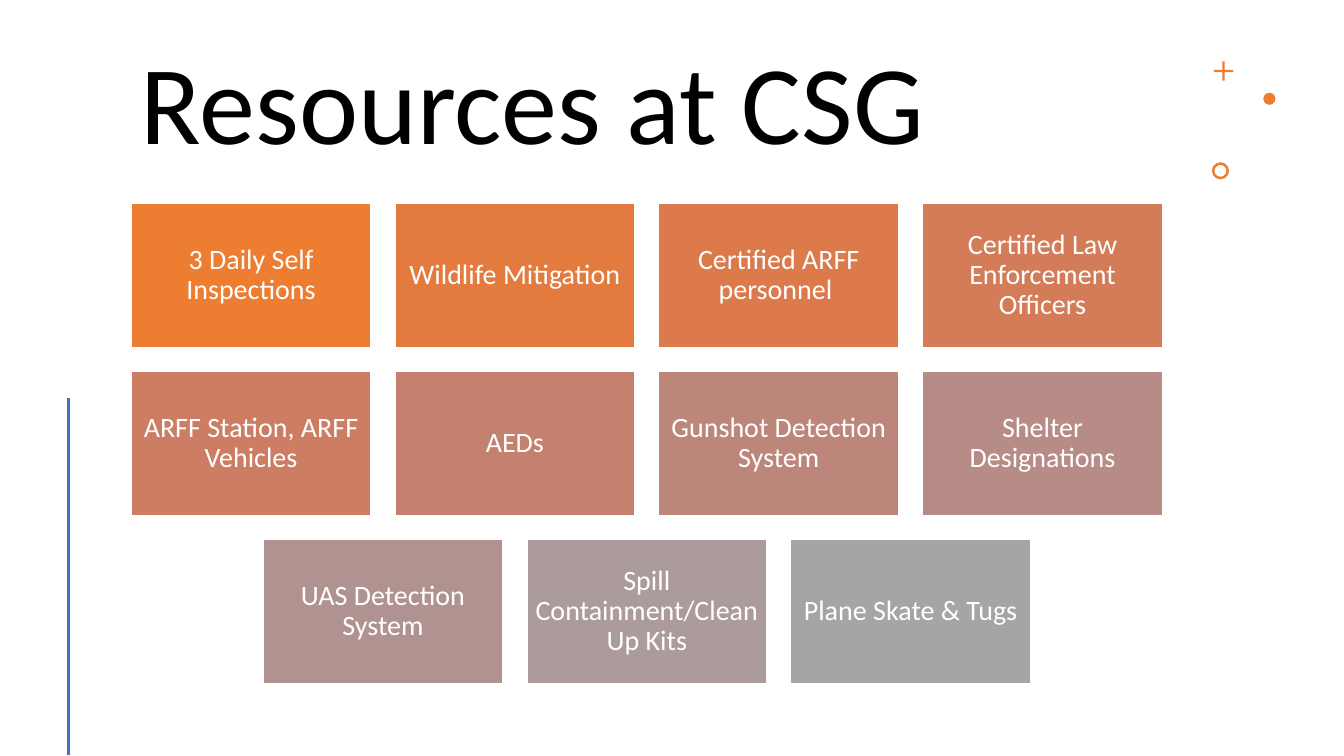
"""Build the slide listing the resources at CSG as a grid of tiles."""
from dataclasses import dataclass

from lxml.etree import SubElement
from pptx import Presentation
from pptx.dml.color import RGBColor
from pptx.enum.shapes import MSO_CONNECTOR as Connector, MSO_SHAPE as Preset
from pptx.enum.text import MSO_ANCHOR as Anchor, PP_ALIGN as Align
from pptx.oxml.ns import qn
from pptx.util import Inches, Pt

TITLE = "Resources at CSG"
ROWS = [
    [("3 Daily Self Inspections", "ED7D31"),
     ("Wildlife Mitigation", "E47B3E"),
     ("Certified ARFF personnel ", "DC7A4B"),
     ("Certified Law Enforcement Officers", "D47B58")],
    [("ARFF Station, ARFF Vehicles", "CC7D64"),
     ("AEDs", "C48170"),
     ("Gunshot Detection System", "BD867B"),
     ("Shelter Designations", "B78C86")],
    [("UAS Detection System", "B09391"),
     ("Spill Containment/Clean Up Kits", "AB9C9B"),
     ("Plane Skate & Tugs", "A5A5A5")],
]
ORNAMENTS = [
    (Preset.CROSS, 12.04, 0.61, 0.19, 0.44),
    (Preset.OVAL, 12.53, 0.92, 0.12, None),
    (Preset.DONUT, 12.02, 1.61, 0.17, 0.15),
]


@dataclass(frozen=True)
class Theme:
    font: str = "Calibri"
    title_size: int = 80
    tile_size: int = 20
    ink: str = "000000"
    paper: str = "FFFFFF"
    accent: str = "ED7D31"
    rule: str = "4472C4"


THEME = Theme()
GRID_LEFT, GRID_TOP, GRID_WIDTH = 1.3, 2.02, 10.23
TILE_WIDTH, TILE_HEIGHT, TILE_INSET = 2.38, 1.43, 0.08
COLUMNS = max(len(row) for row in ROWS)
GAP = (GRID_WIDTH - COLUMNS * TILE_WIDTH) / (COLUMNS - 1)


def colour(code):
    return RGBColor.from_string(code)


def write(shape, text, size, ink, align):
    frame = shape.text_frame
    frame.word_wrap = True
    frame.vertical_anchor = Anchor.MIDDLE
    para = frame.paragraphs[0]
    para.alignment = align
    para.line_spacing = 0.9
    span = para.add_run()
    span.text = text
    span.font.name = THEME.font
    span.font.size = Pt(size)
    span.font.color.rgb = colour(ink)
    return frame


def add_filled(page, preset, left, top, width, height, fill):
    shape = page.shapes.add_shape(
        preset, Inches(left), Inches(top), Inches(width), Inches(height))
    shape.shadow.inherit = False
    shape.fill.solid()
    shape.fill.fore_color.rgb = colour(fill)
    shape.line.fill.background()
    return shape


def add_title(page):
    box = page.shapes.add_textbox(
        Inches(GRID_LEFT), Inches(0.42), Inches(GRID_WIDTH), Inches(1.31))
    write(box, TITLE, THEME.title_size, THEME.ink, Align.LEFT)


def add_ornaments(page):
    for preset, left, top, size, adjustment in ORNAMENTS:
        shape = add_filled(page, preset, left, top, size, size, THEME.accent)
        if adjustment is not None:
            shape.adjustments[0] = adjustment


def add_rule(page):
    rule = page.shapes.add_connector(
        Connector.STRAIGHT, Inches(0.68), Inches(3.95), Inches(0.68), Inches(7.49))
    rule.line.color.rgb = colour(THEME.rule)
    rule.line.width = Pt(2)
    SubElement(rule._element.spPr, qn("a:effectLst"))


def add_tile(page, left, top, text, fill):
    tile = add_filled(
        page, Preset.RECTANGLE, left, top, TILE_WIDTH, TILE_HEIGHT, fill)
    tile.line.color.rgb = colour(THEME.paper)
    tile.line.width = Pt(1)
    frame = write(tile, text, THEME.tile_size, THEME.paper, Align.CENTER)
    frame.margin_left = frame.margin_right = Inches(TILE_INSET)
    frame.margin_top = frame.margin_bottom = Inches(TILE_INSET)


def add_grid(page):
    for row_index, row in enumerate(ROWS):
        top = GRID_TOP + row_index * (TILE_HEIGHT + GAP)
        indent = (COLUMNS - len(row)) * (TILE_WIDTH + GAP) / 2
        for column, (text, fill) in enumerate(row):
            left = GRID_LEFT + indent + column * (TILE_WIDTH + GAP)
            add_tile(page, left, top, text, fill)


def main():
    deck = Presentation()
    deck.slide_width, deck.slide_height = Inches(13.33), Inches(7.5)
    page = deck.slides.add_slide(deck.slide_layouts[6])
    add_title(page)
    add_ornaments(page)
    add_rule(page)
    add_grid(page)
    deck.save("out.pptx")


if __name__ == "__main__":
    main()
